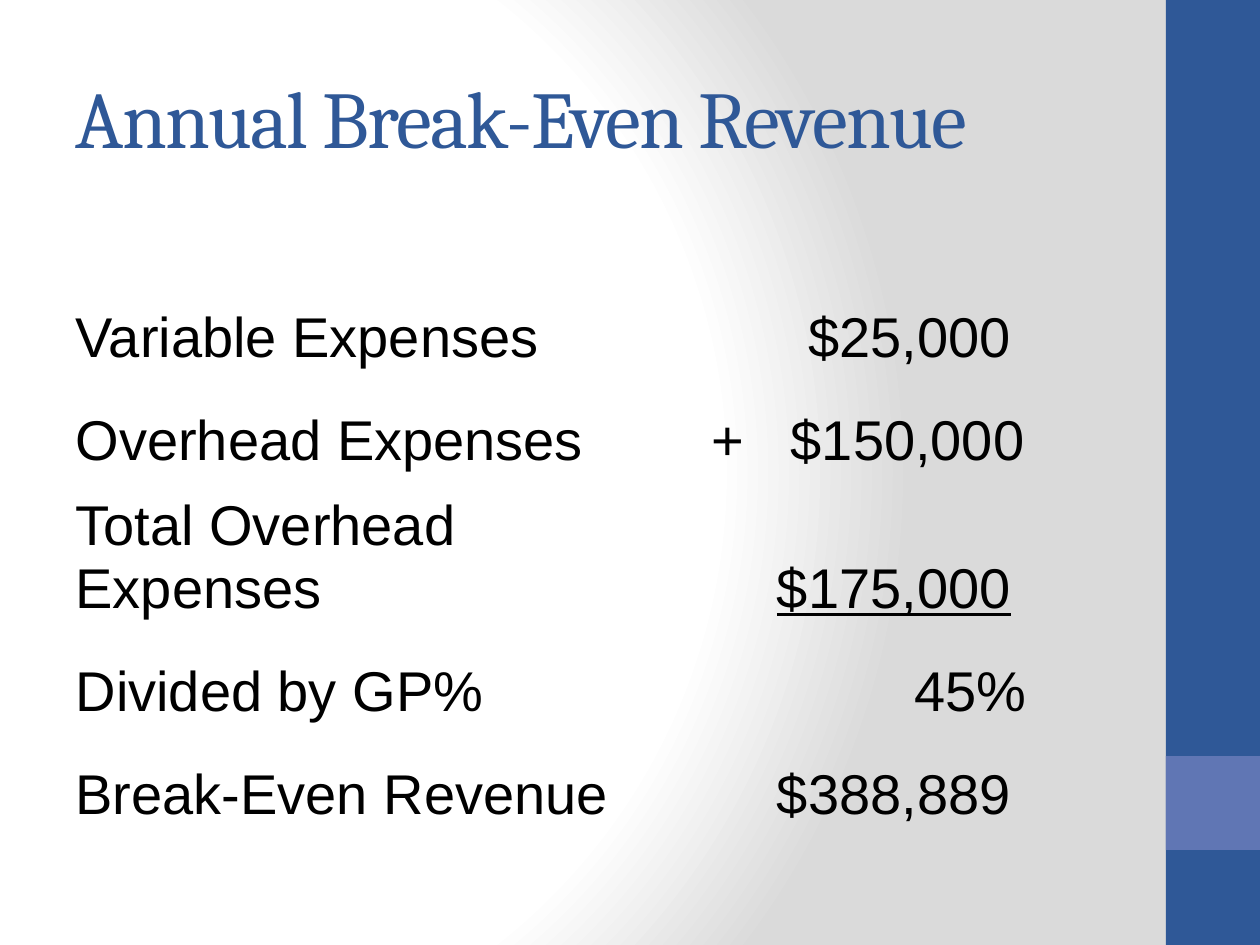
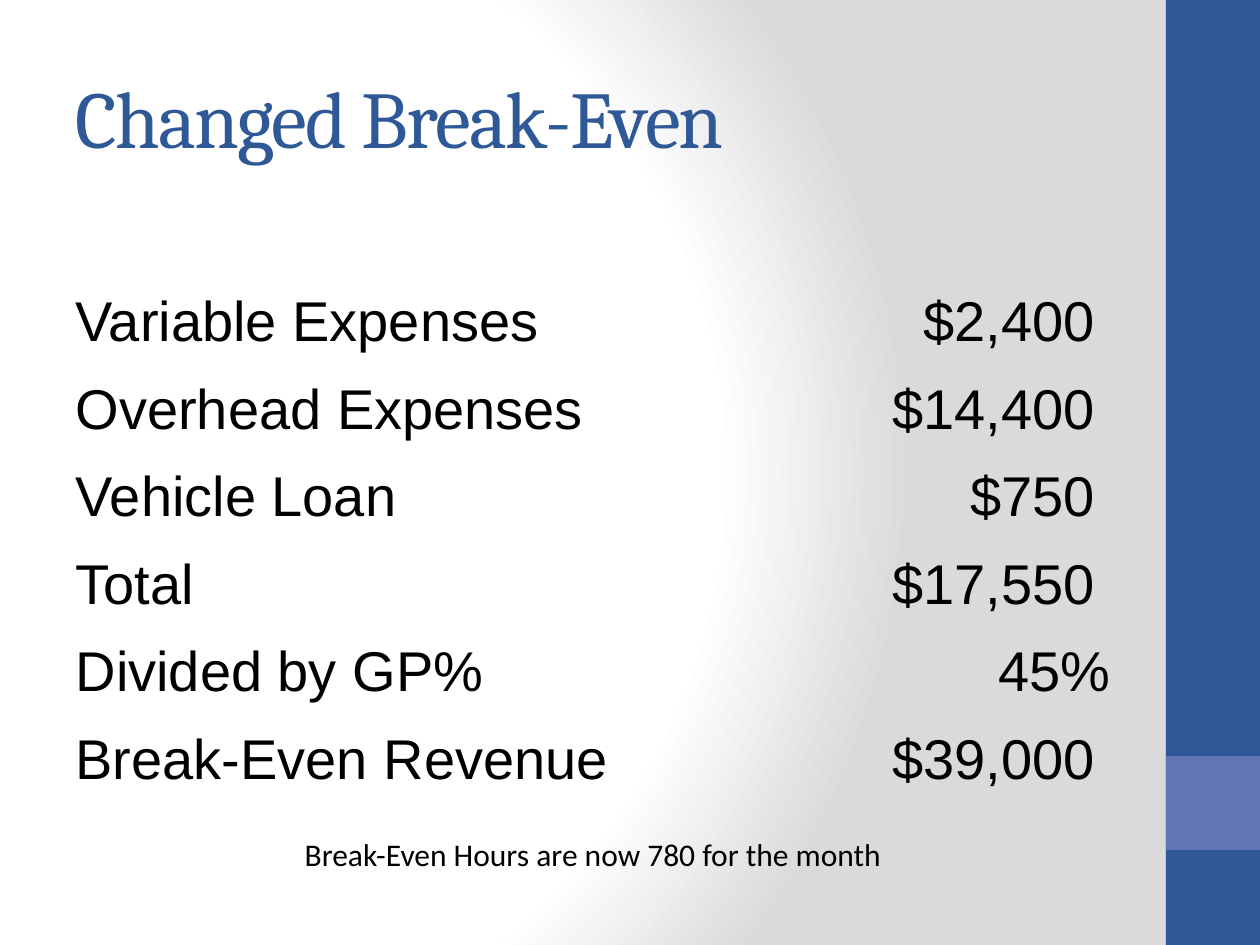
import pptx
import pptx.util
import pptx.dml.color
import pptx.enum.shapes
import pptx.enum.text
import pptx.oxml
import pptx.oxml.ns
import lxml.etree

SCALE = 914400 / 126
NAVY, LILAC, BLACK = "2F5897", "6076B4", "000000"
STOPS = [(0, "FFFFFF"), (75, "FFFFFF"), (100, "DADADA")]
PLAIN = "{2D5ABB26-0587-4C30-8999-92F81FD0307C}"
PAGE = (1260, 945)
BANDS = [((1166, 0, 94, 945), NAVY), ((1166, 756, 94, 94), LILAC)]
TITLE = (63, 38, 1050, 157)
LEFT = pptx.enum.text.PP_ALIGN.LEFT
RIGHT = pptx.enum.text.PP_ALIGN.RIGHT
MID = pptx.enum.text.PP_ALIGN.CENTER


def px(n):
    return pptx.util.Emu(round(n * SCALE))


def hue(code):
    return pptx.dml.color.RGBColor.from_string(code)


def tag(name):
    return pptx.oxml.ns.qn(name)


def add_run(para, text, face, size, code, line=False):
    run = para.add_run()
    run.text = text
    run.font.name = face
    run.font.size = pptx.util.Pt(size)
    run.font.color.rgb = hue(code)
    run.font.underline = line
    return run


def set_back(master):
    stops = "".join(
        f'<a:gs pos="{pos * 1000}"><a:srgbClr val="{code}"/></a:gs>'
        for pos, code in STOPS)
    back = pptx.oxml.parse_xml(
        f'<p:bg {pptx.oxml.ns.nsdecls("p", "a")}><p:bgPr>'
        f'<a:gradFill rotWithShape="1"><a:gsLst>{stops}</a:gsLst>'
        '<a:path path="circle"><a:fillToRect l="20000" t="50000" '
        'r="100000" b="50000"/></a:path></a:gradFill>'
        '<a:effectLst/></p:bgPr></p:bg>')
    root = master.element.find(tag("p:cSld"))
    for old in root.findall(tag("p:bg")):
        root.remove(old)
    root.insert(0, back)


def add_bands(slide):
    for box, code in BANDS:
        band = slide.shapes.add_shape(
            pptx.enum.shapes.MSO_SHAPE.RECTANGLE, *map(px, box))
        band.shadow.inherit = False
        band.fill.solid()
        band.fill.fore_color.rgb = hue(code)
        band.line.fill.background()


def set_title(slide, text):
    head = slide.shapes.title
    head.left, head.top, head.width, head.height = map(px, TITLE)
    head.text_frame.vertical_anchor = pptx.enum.text.MSO_ANCHOR.MIDDLE
    para = head.text_frame.paragraphs[0]
    para.alignment = LEFT
    run = add_run(para, text, "Cambria", 46, NAVY)
    run.font._element.set("spc", "-100")


def set_tabs(para, spots):
    para.alignment = LEFT
    tabs = lxml.etree.SubElement(para._p.get_or_add_pPr(), tag("a:tabLst"))
    for spot in spots:
        lxml.etree.SubElement(
            tabs, tag("a:tab"), pos=str(px(spot)), algn="r")


def fill_cell(cell, text, align, line=False):
    cell.fill.background()
    cell.vertical_anchor = pptx.enum.text.MSO_ANCHOR.BOTTOM
    para = cell.text_frame.paragraphs[0]
    para.alignment = align
    if "\t" in text:
        set_tabs(para, (47, 327))
    add_run(para, text.rstrip(), "Arial", 32, BLACK, line)
    if text.endswith(" "):
        add_run(para, " ", "Arial", 32, BLACK)


def add_sums(slide, left, top, cols, highs, rows, lined=()):
    frame = slide.shapes.add_table(
        len(rows), len(cols), *map(px, (left, top, sum(cols), sum(highs))))
    grid = frame.table
    grid.first_row = grid.horz_banding = False
    grid._tbl.tblPr.find(tag("a:tableStyleId")).text = PLAIN
    for col, wide in zip(grid.columns, cols):
        col.width = px(wide)
    for i, (high, (label, value)) in enumerate(zip(highs, rows)):
        grid.rows[i].height = px(high)
        fill_cell(grid.cell(i, 0), label, LEFT)
        fill_cell(grid.cell(i, 1), value, RIGHT, i in lined)


def add_note(slide, box, text):
    note = slide.shapes.add_textbox(*map(px, box)).text_frame
    note.word_wrap = True
    note.paragraphs[0].alignment = MID
    add_run(note.paragraphs[0], text, "Calibri", 18, BLACK)


def add_page(deck, title):
    slide = deck.slides.add_slide(deck.slide_layouts[5])
    add_bands(slide)
    set_title(slide, title)
    return slide


def add_year(deck):
    slide = add_page(deck, "Annual Break-Even Revenue")
    rows = [
        ("Variable Expenses", "$25,000 "),
        ("Overhead Expenses", "\t+\t$150,000"),
        ("Total Overhead Expenses", "$175,000 "),
        ("Divided by GP%", "45%"),
        ("Break-Even Revenue", "$388,889 "),
    ]
    add_sums(slide, 63, 273, (622, 354), (103, 103, 148, 103, 103),
             rows, lined=(2,))


def add_change(deck):
    slide = add_page(deck, "Changed Break-Even")
    rows = [
        ("Variable Expenses", "$2,400 "),
        ("Overhead Expenses", "$14,400 "),
        ("Vehicle Loan", "$750 "),
        ("Total", "$17,550 "),
        ("Divided by GP%", "45%"),
        ("Break-Even Revenue", "$39,000 "),
    ]
    add_sums(slide, 63, 273, (675, 385), (87, 88) * 3, rows)
    add_note(slide, (168, 829, 850, 50),
             "Break-Even Hours are now 780 for the month")


def main():
    deck = pptx.Presentation()
    deck.slide_width, deck.slide_height = map(px, PAGE)
    set_back(deck.slide_master)
    add_year(deck)
    add_change(deck)
    deck.save("out.pptx")


if __name__ == "__main__":
    main()
